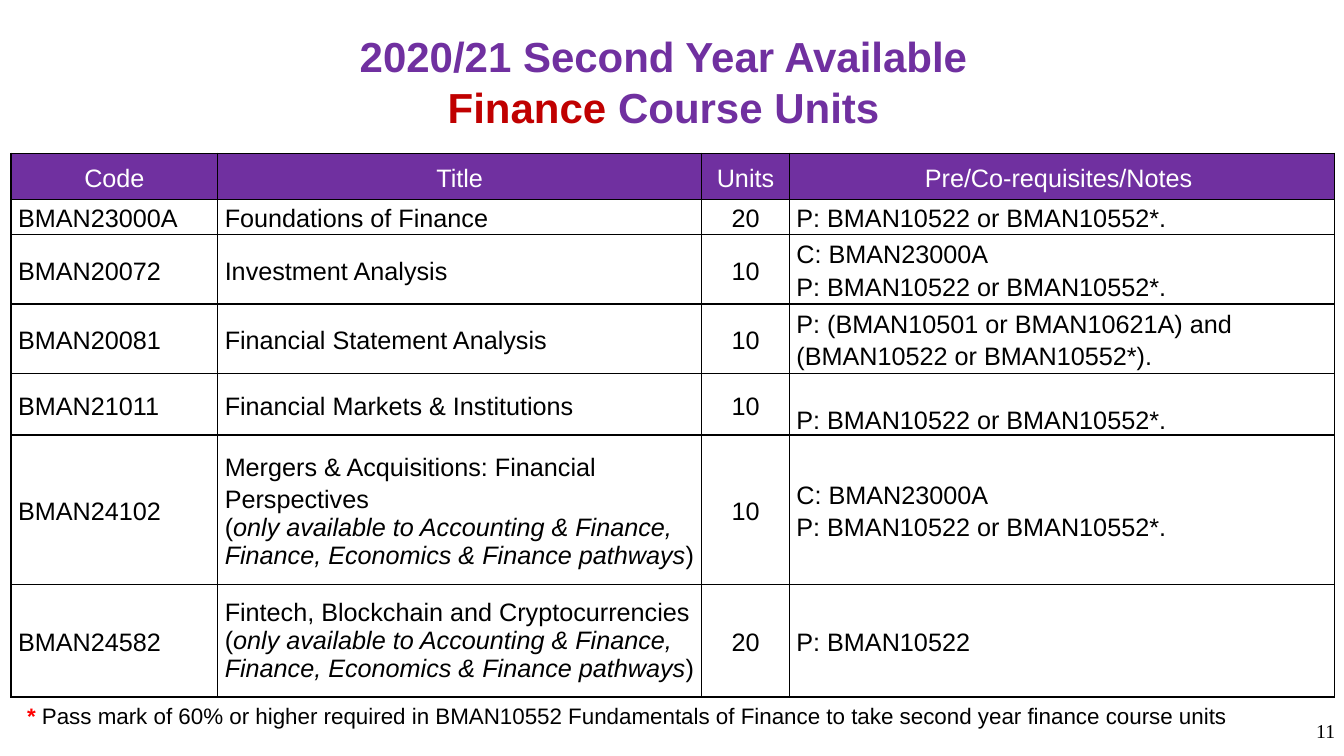
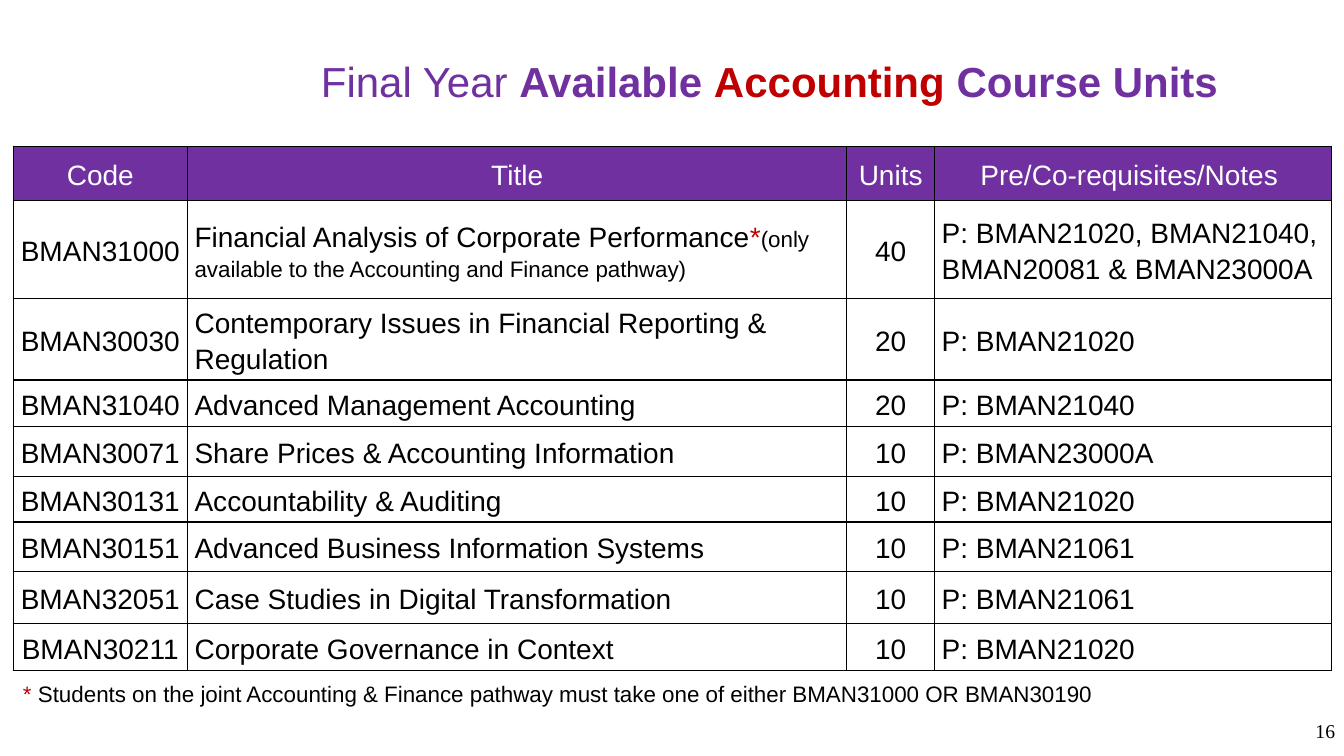
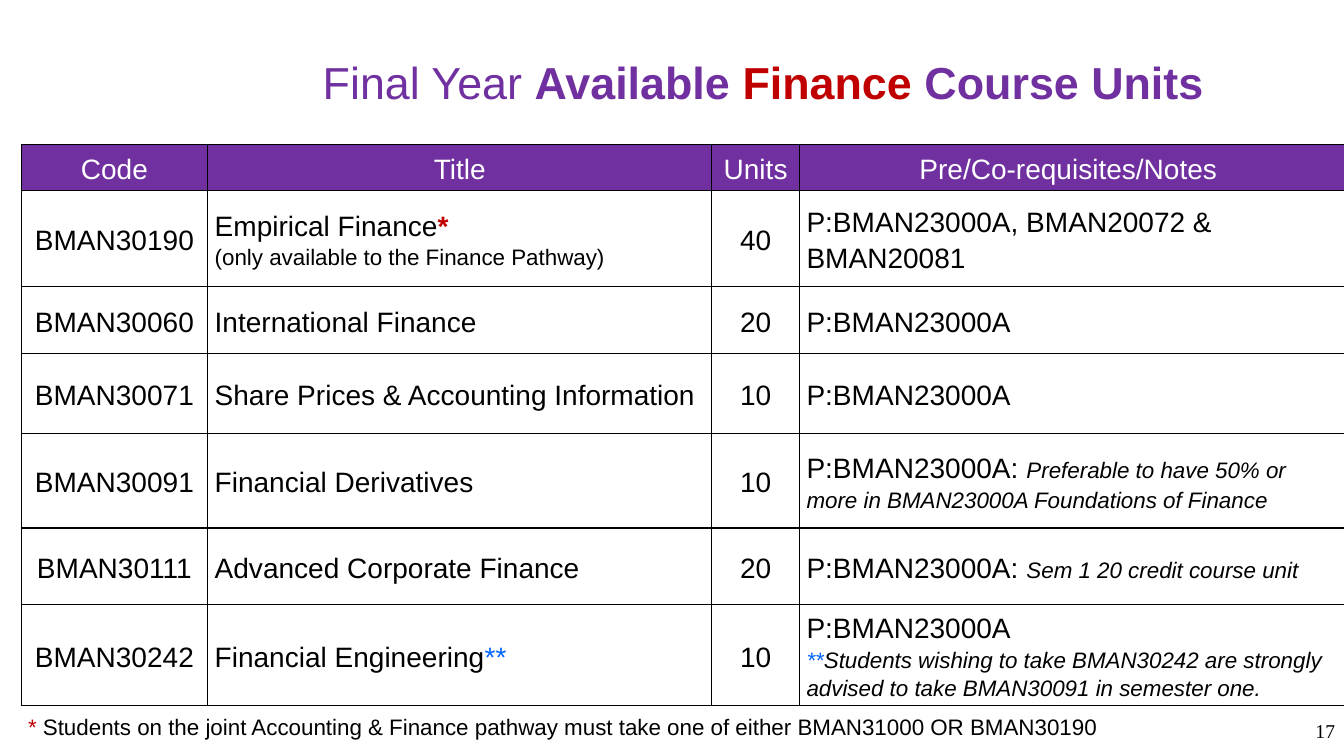
"""Build three slides that list the available course units."""
import dataclasses

import pptx
import pptx.dml.color
import pptx.enum.text
import pptx.oxml
import pptx.oxml.ns
import pptx.util

Inches = pptx.util.Inches
RGBColor = pptx.dml.color.RGBColor
ALIGN = pptx.enum.text.PP_ALIGN
ANCHOR = pptx.enum.text.MSO_ANCHOR

PURPLE = RGBColor(0x70, 0x30, 0xA0)
CRIMSON = RGBColor(0xC0, 0x00, 0x00)
RED = RGBColor(0xFF, 0x00, 0x00)
BLUE = RGBColor(0x00, 0x66, 0xFF)
BLACK = RGBColor(0x00, 0x00, 0x00)
WHITE = RGBColor(0xFF, 0xFF, 0xFF)

HEADINGS = ("Code", "Title", "Units", "Pre/Co-requisites/Notes ")
UNITS_WIDTH = 0.87
LOOSE = 1.15


@dataclasses.dataclass
class Paragraph:
    runs: list
    spacing: float = None


def write(frame, text, size=18, color=BLACK, font="Arial", bold=False,
          italic=False, align=ALIGN.LEFT, spacing=1.0):
    base = dict(size=size, color=color, bold=bold, italic=italic)
    paragraphs = text if isinstance(text, list) else [text]
    for index, content in enumerate(paragraphs):
        if isinstance(content, str):
            content = Paragraph([content])
        line = frame.add_paragraph() if index else frame.paragraphs[0]
        line.alignment = align
        line.line_spacing = content.spacing or spacing
        for part in content.runs:
            words, changes = (part, {}) if isinstance(part, str) else part
            style = {**base, **changes}
            run = line.add_run()
            run.text = words
            run.font.name = font
            run.font.size = pptx.util.Pt(style["size"])
            run.font.bold = style["bold"]
            run.font.italic = style["italic"]
            run.font.color.rgb = style["color"]


class CourseDeck:
    def __init__(self):
        self.deck = pptx.Presentation()
        self.deck.slide_width = Inches(13.33)
        self.deck.slide_height = Inches(7.5)
        self.slide = None

    def new_slide(self, number):
        self.slide = self.deck.slides.add_slide(self.deck.slide_layouts[6])
        self.text((11.26, 7, 2.08, 0.5), number, anchor=ANCHOR.MIDDLE,
                  size=14, font="Times New Roman", align=ALIGN.RIGHT)

    def text(self, place, text, anchor=ANCHOR.TOP, **style):
        box = self.slide.shapes.add_textbox(*map(Inches, place))
        box.text_frame.word_wrap = True
        box.text_frame.vertical_anchor = anchor
        write(box.text_frame, text, **style)

    def title(self, left, width, text, size=30):
        self.text((left, 0.3, width, 1.01), text, anchor=ANCHOR.MIDDLE,
                  size=size, color=PURPLE, align=ALIGN.CENTER)

    def footnote(self, left, top, text, **star):
        self.text((left, top, 12.36, 0.39),
                  Paragraph([("* ", star), text]), size=16, spacing=LOOSE)

    def border(self, cell):
        properties = cell._tc.get_or_add_tcPr()
        for index, side in enumerate("LRTB"):
            properties.insert(index, pptx.oxml.parse_xml(
                f'<a:ln{side} {pptx.oxml.ns.nsdecls("a")} w="12700"><a:solidFill>'
                f'<a:srgbClr val="{BLACK}"/></a:solidFill></a:ln{side}>'))

    def course_table(self, left, top, widths, header_height, courses,
                     size=20, code_align=ALIGN.CENTER):
        code_width, title_width, notes_width = widths
        widths = (code_width, title_width, UNITS_WIDTH, notes_width)
        rows = [(header_height, *HEADINGS), *courses]
        height = sum(row[0] for row in rows)
        table = self.slide.shapes.add_table(
            len(rows), len(widths), Inches(left), Inches(top),
            Inches(sum(widths)), Inches(height)).table
        table.horz_banding = table.first_row = False
        for column, width in zip(table.columns, widths):
            column.width = Inches(width)
        aligns = (code_align, ALIGN.LEFT, ALIGN.CENTER, ALIGN.LEFT)
        for r, (row_height, *contents) in enumerate(rows):
            table.rows[r].height = Inches(row_height)
            for c, content in enumerate(contents):
                cell = table.cell(r, c)
                cell.margin_left = cell.margin_right = Inches(0.07)
                cell.margin_top = cell.margin_bottom = 0
                cell.vertical_anchor = ANCHOR.MIDDLE
                if r:
                    cell.fill.background()
                else:
                    cell.fill.solid()
                    cell.fill.fore_color.rgb = PURPLE
                self.border(cell)
                write(cell.text_frame, content, size=size, spacing=LOOSE,
                      color=BLACK if r else WHITE,
                      align=aligns[c] if r else ALIGN.CENTER)
        return table


def final_year_title(subject, ending):
    return Paragraph(["Final Year ", ("Available ", dict(bold=True)),
                      (subject, dict(bold=True, color=CRIMSON)),
                      (ending, dict(bold=True))])


def main():
    deck = CourseDeck()
    small = dict(size=16)
    aside = dict(size=16, italic=True)
    finance_entry = "P: BMAN10522 or BMAN10552*."
    with_foundations = ["C: BMAN23000A", finance_entry]
    pathways = Paragraph([
        "(", ("only available to Accounting & Finance, Finance, Economics & "
              "Finance pathways", dict(italic=True)), ")"], 1.0)
    joint_rule = ("Students on the joint Accounting & Finance pathway must take "
                  "one of either BMAN31000 OR BMAN30190")

    deck.new_slide("11")
    deck.title(0, 13.28, [
        Paragraph([("2020/21 Second Year Available ", dict(bold=True))]),
        Paragraph([("Finance", dict(bold=True, color=CRIMSON)),
                   (" Course Units ", dict(bold=True))])])
    second_year = deck.course_table(0.11, 1.52, (2.05, 4.8, 5.41), 0.46, [
        (0.32, "BMAN23000A", "Foundations of Finance", "20", finance_entry),
        (0.64, "BMAN20072", "Investment Analysis", "10", with_foundations),
        (0.64, "BMAN20081", "Financial Statement Analysis", "10",
         "P: (BMAN10501 or BMAN10621A) and (BMAN10522 or BMAN10552*)."),
        (0.61, "BMAN21011", "Financial Markets & Institutions", "10",
         finance_entry),
        (1.48, "BMAN24102",
         ["Mergers & Acquisitions: Financial Perspectives", pathways], "10",
         with_foundations),
        (1.12, "BMAN24582",
         [Paragraph(["Fintech, Blockchain and Cryptocurrencies"], 1.0), pathways],
         "20", "P: BMAN10522"),
    ], size=18, code_align=ALIGN.LEFT)
    second_year.cell(4, 3).vertical_anchor = ANCHOR.BOTTOM
    deck.footnote(0.17, 6.88, "Pass mark of 60% or higher required in BMAN10552 "
                  "Fundamentals of Finance to take second year finance course units",
                  color=RED, bold=True)

    deck.new_slide("16")
    deck.title(2.1, 11.18, final_year_title("Accounting", " Course Units "))
    deck.course_table(0.13, 1.45, (1.73, 6.54, 3.94), 0.54, [
        (0.97, "BMAN31000", Paragraph([
            "Financial Analysis of Corporate Performance",
            ("*", dict(color=CRIMSON)),
            ("(only available to the Accounting and Finance pathway)", small)]),
         "40", "P: BMAN21020, BMAN21040, BMAN20081 & BMAN23000A"),
        (0.81, "BMAN30030",
         "Contemporary Issues in Financial Reporting & Regulation", "20",
         "P: BMAN21020"),
        (0.46, "BMAN31040", "Advanced Management Accounting", "20",
         "P: BMAN21040"),
        (0.5, "BMAN30071", "Share Prices & Accounting Information", "10",
         "P: BMAN23000A"),
        (0.45, "BMAN30131", "Accountability & Auditing", "10", "P: BMAN21020"),
        (0.49, "BMAN30151", "Advanced Business Information Systems", "10",
         "P: BMAN21061"),
        (0.52, "BMAN32051", "Case Studies in Digital Transformation", "10",
         "P: BMAN21061"),
        (0.46, "BMAN30211", "Corporate Governance in Context", "10",
         "P: BMAN21020"),
    ])
    deck.footnote(0.13, 6.66, joint_rule, color=CRIMSON)

    deck.new_slide("17")
    deck.title(1.78, 11.58, final_year_title("Finance", " Course Units"), size=32)
    deck.course_table(0.21, 1.43, (1.85, 5, 5.41), 0.46, [
        (0.95, "BMAN30190", [
            Paragraph(["Empirical Finance", ("*", dict(color=CRIMSON, bold=True))]),
            Paragraph([("(only available to the Finance Pathway)", small)])],
         "40", "P:BMAN23000A, BMAN20072 & BMAN20081"),
        (0.67, "BMAN30060", "International Finance", "20", "P:BMAN23000A"),
        (0.79, "BMAN30071", "Share Prices & Accounting Information", "10",
         "P:BMAN23000A"),
        (0.94, "BMAN30091", "Financial Derivatives", "10", Paragraph([
            "P:BMAN23000A: ",
            ("Preferable to have 50% or more in BMAN23000A Foundations of Finance",
             aside)])),
        (0.76, "BMAN30111", "Advanced Corporate Finance", "20", Paragraph([
            "P:BMAN23000A: ", ("Sem 1 20 credit course unit", aside)])),
        (1, "BMAN30242",
         Paragraph(["Financial Engineering", ("**", dict(color=BLUE))]), "10", [
             "P:BMAN23000A",
             Paragraph([("**", dict(aside, color=BLUE)),
                        ("Students wishing to take BMAN30242 are strongly advised "
                         "to take BMAN30091 in semester one.", aside)])]),
    ])
    deck.footnote(0.18, 6.99, joint_rule, color=CRIMSON)

    deck.deck.save("out.pptx")


if __name__ == "__main__":
    main()
